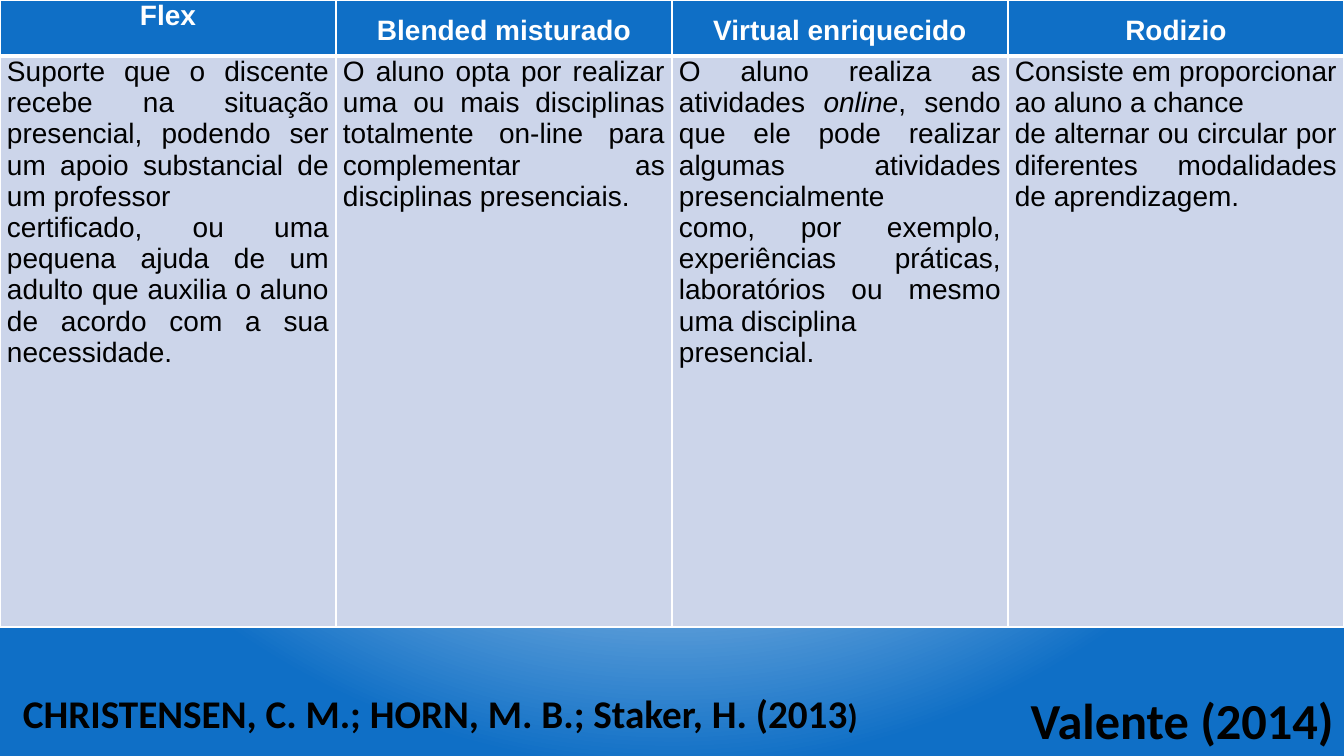
from dataclasses import dataclass

from lxml import etree
from pptx import Presentation
from pptx import util as u
from pptx.dml.color import RGBColor
from pptx.enum import text
from pptx.oxml import parse_xml
from pptx.oxml.ns import nsdecls, qn


@dataclass(frozen=True)
class Theme:
    blue: str = "0F6FC6"
    pale: str = "CCD5EA"
    white: str = "FFFFFF"
    black: str = "000000"
    table_font: str = "Arial"
    source_font: str = "Calibri"
    table_size: int = 20
    source_size: int = 28
    bracket_size: int = 24
    highlight_size: int = 36


SLIDE_WIDTH, SLIDE_HEIGHT = 1344, 756
HEADER_HEIGHT, BODY_HEIGHT = 56, 571

MODELS = {
    "Flex": [
        "Suporte que o discente recebe na situação presencial, podendo ser um apoio substancial de um professor",
        "certificado, ou uma pequena ajuda de um adulto que auxilia o aluno de acordo com a sua necessidade.",
    ],
    "Blended misturado": [
        "O aluno opta por realizar uma ou mais disciplinas totalmente on-line para complementar as disciplinas presenciais.",
    ],
    "Virtual enriquecido": [
        "O aluno realiza as atividades *online*, sendo que ele pode realizar algumas atividades presencialmente",
        "como, por exemplo, experiências práticas, laboratórios ou mesmo uma disciplina",
        "presencial.",
    ],
    "Rodizio": [
        "Consiste em proporcionar ao aluno a chance",
        "de alternar ou circular por diferentes modalidades de aprendizagem.",
    ],
}


def px(length):
    return u.Emu(round(length * u.Inches(1) / 100.8))


class SlideBuilder:
    def __init__(self, slide, theme):
        self.slide = slide
        self.theme = theme

    def background(self):
        t = self.theme
        self.slide.background.fill.gradient()
        gradient = self.slide.background._cSld.find(".//" + qn("a:gradFill"))
        stops = "".join(
            f'<a:gs pos="{position}"><a:srgbClr val="{color}"/></a:gs>'
            for position, color in ((0, t.white), (35000, t.white), (100000, t.blue))
        )
        radial = parse_xml(
            f'<a:gradFill {nsdecls("a")} rotWithShape="1"><a:gsLst>{stops}</a:gsLst>'
            '<a:path path="circle"><a:fillToRect l="50000" t="-80000" r="50000" b="180000"/>'
            "</a:path></a:gradFill>"
        )
        gradient.getparent().replace(gradient, radial)

    def style(self, paragraph, font, size, color, bold, align):
        paragraph.alignment = align
        paragraph.font.name = font
        paragraph.font.size = u.Pt(size)
        paragraph.font.bold = bold
        paragraph.font.color.rgb = RGBColor.from_string(color)

    def cell(self, cell, paragraphs, fill, color, bold, align, borders, spacing=None):
        cell.margin_left = cell.margin_right = px(7)
        cell.margin_top = cell.margin_bottom = 0
        cell.fill.solid()
        cell.fill.fore_color.rgb = RGBColor.from_string(fill)
        properties = cell._tc.get_or_add_tcPr()
        for order, (side, width) in enumerate(borders.items()):
            line = etree.Element(qn(f"a:ln{side}"), w=str(u.Pt(width)))
            solid = etree.SubElement(line, qn("a:solidFill"))
            etree.SubElement(solid, qn("a:srgbClr"), val=self.theme.white)
            properties.insert(order, line)
        frame = cell.text_frame
        for index, content in enumerate(paragraphs):
            paragraph = frame.add_paragraph() if index else frame.paragraphs[0]
            self.style(paragraph, self.theme.table_font, self.theme.table_size, color, bold, align)
            if spacing:
                paragraph.line_spacing = spacing
            for part, words in enumerate(content.split("*")):
                run = paragraph.add_run()
                run.text = words
                if part % 2:
                    run.font.italic = True

    def models_table(self, models):
        t = self.theme
        table = self.slide.shapes.add_table(
            2, len(models), 0, 0, px(SLIDE_WIDTH), px(HEADER_HEIGHT + BODY_HEIGHT)
        ).table
        table.rows[0].height = px(HEADER_HEIGHT)
        table.rows[1].height = px(BODY_HEIGHT)
        for column, (model, description) in enumerate(models.items()):
            table.columns[column].width = px(SLIDE_WIDTH // len(models))
            self.cell(table.cell(0, column), [model], t.blue, t.white, True,
                      text.PP_ALIGN.CENTER, {"L": 1, "R": 1, "T": 1, "B": 3},
                      1.5 if column else None)
            self.cell(table.cell(1, column), description, t.pale, t.black, False,
                      text.PP_ALIGN.JUSTIFY, {"L": 1, "R": 1, "T": 3, "B": 1})

    def citation(self, left, top, width, height, words, size, align, wrap):
        box = self.slide.shapes.add_textbox(px(left), px(top), px(width), px(height))
        frame = box.text_frame
        frame.word_wrap = wrap
        frame.auto_size = text.MSO_AUTO_SIZE.SHAPE_TO_FIT_TEXT
        paragraph = frame.paragraphs[0]
        self.style(paragraph, self.theme.source_font, size, self.theme.black, True, align)
        paragraph.add_run().text = words
        return paragraph


def main():
    theme = Theme()
    deck = Presentation()
    deck.slide_width, deck.slide_height = px(SLIDE_WIDTH), px(SLIDE_HEIGHT)
    builder = SlideBuilder(deck.slides.add_slide(deck.slide_layouts[6]), theme)
    builder.background()
    builder.models_table(MODELS)
    builder.citation(1017, 684, 327, 72, "Valente (2014)",
                     theme.highlight_size, text.PP_ALIGN.RIGHT, False)
    authors = builder.citation(13, 684, 867, 57, "CHRISTENSEN, C. M.; HORN, M. B.; Staker, H. (2013",
                               theme.source_size, text.PP_ALIGN.LEFT, True)
    bracket = authors.add_run()
    bracket.text = ")"
    bracket.font.size = u.Pt(theme.bracket_size)
    deck.save("out.pptx")


if __name__ == "__main__":
    main()
